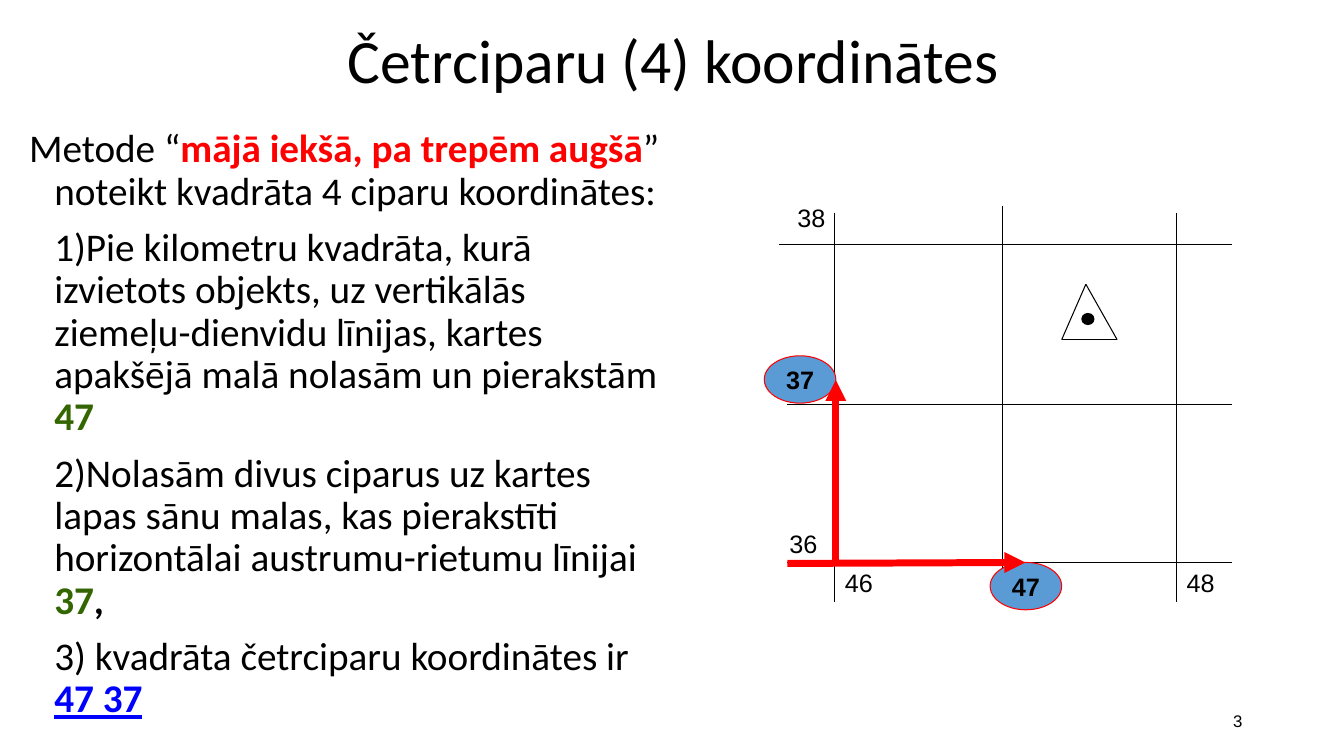
from dataclasses import dataclass

from pptx import Presentation
from pptx.dml.color import RGBColor
from pptx.enum.shapes import MSO_CONNECTOR, MSO_SHAPE
from pptx.enum.text import MSO_ANCHOR, PP_ALIGN
from pptx.oxml.ns import qn
from pptx.shapes.autoshape import Shape
from pptx.slide import Slide
from pptx.util import Inches, Pt
from lxml.etree import SubElement

BLACK = RGBColor(0x00, 0x00, 0x00)
RED = RGBColor(0xFF, 0x00, 0x00)
GREEN = RGBColor(0x33, 0x66, 0x00)
LINK_BLUE = RGBColor(0x00, 0x00, 0xFF)
MARKER_BLUE = RGBColor(0x5B, 0x9B, 0xD5)


@dataclass(frozen=True)
class Box:
    left: float
    top: float
    width: float
    height: float


@dataclass(frozen=True)
class Phrase:
    text: str
    color: RGBColor = BLACK
    bold: bool = False
    underline: bool = False


@dataclass(frozen=True)
class Step:
    phrases: tuple[Phrase, ...]
    first_line_indent: float = 0


@dataclass(frozen=True)
class Label:
    text: str
    box: Box
    size: float = 18
    font: str = "Arial"
    align: PP_ALIGN = PP_ALIGN.LEFT
    anchor: MSO_ANCHOR = MSO_ANCHOR.TOP
    line_spacing: float = 1.0


@dataclass(frozen=True)
class Line:
    start: tuple[float, float]
    end: tuple[float, float]
    color: RGBColor = BLACK
    width: float = 0.75
    arrow: bool = False


@dataclass(frozen=True)
class Oval:
    box: Box
    fill: RGBColor
    outline: RGBColor
    text: str = ""


STEPS = (
    Step((
        Phrase("Metode “"),
        Phrase("mājā iekšā, pa trepēm augšā", RED, True),
        Phrase("” noteikt kvadrāta 4 ciparu koordinātes:"),
    ), -0.25),
    Step((
        Phrase("1)Pie kilometru kvadrāta, kurā izvietots objekts, uz vertikālās "
               "ziemeļu-dienvidu līnijas, kartes apakšējā malā nolasām un pierakstām "),
        Phrase("47", GREEN, True),
    )),
    Step((
        Phrase("2)Nolasām divus ciparus uz kartes lapas sānu malas, kas pierakstīti "
               "horizontālai austrumu-rietumu līnijai "),
        Phrase("37", GREEN, True),
        Phrase(",", BLACK, True),
    )),
    Step((
        Phrase("3) kvadrāta četrciparu koordinātes ir "),
        Phrase("47 37", LINK_BLUE, True, True),
    )),
)

LABELS = (
    Label("3", Box(9.42, 6.95, 3, 0.4), 12, align=PP_ALIGN.RIGHT, anchor=MSO_ANCHOR.MIDDLE),
    Label("Četrciparu (4) koordinātes", Box(2.18, 0.21, 9, 0.85), 44, "Calibri",
          PP_ALIGN.CENTER, MSO_ANCHOR.MIDDLE, 0.9),
    Label("46", Box(8.28, 5.58, 0.79, 0.4)),
    Label("48", Box(11.67, 5.58, 0.87, 0.4)),
    Label("36", Box(7.73, 5.19, 0.79, 0.4)),
    Label("38", Box(7.81, 1.96, 0.55, 0.4)),
)

GRID_RIGHT, GRID_BOTTOM = 12.22, 5.97
ROWS = ((7.81, 5.58), (7.81, 4.01), (7.73, 2.43))
COLUMNS = ((8.28, 2.11), (9.94, 2.04), (11.67, 2.11))
GRID = tuple(Line((left, y), (GRID_RIGHT, y)) for left, y in ROWS) + tuple(
    Line((x, top), (x, GRID_BOTTOM)) for x, top in COLUMNS
)

CORNERS = ((10.53, 3.37), (10.77, 2.82), (11.08, 3.37))
TRIANGLE = tuple(Line(start, end) for start, end in zip(CORNERS, CORNERS[1:] + CORNERS[:1]))

ARROWS = (
    Line((7.81, 5.59), (10.17, 5.58), RED, 5, True),
    Line((8.29, 5.57), (8.29, 3.77), RED, 5, True),
)

OVALS = (
    Oval(Box(9.82, 5.58, 0.71, 0.47), MARKER_BLUE, RED, "47"),
    Oval(Box(7.58, 3.53, 0.71, 0.47), MARKER_BLUE, RED, "37"),
    Oval(Box(10.73, 3.11, 0.12, 0.11), BLACK, BLACK),
)


def inches(box: Box) -> tuple[Inches, ...]:
    return tuple(Inches(n) for n in (box.left, box.top, box.width, box.height))


def add_text_area(slide: Slide, box: Box) -> Shape:
    area = slide.shapes.add_textbox(*inches(box))
    area.text_frame.word_wrap = True
    return area


def draw_label(slide: Slide, label: Label) -> None:
    frame = add_text_area(slide, label.box).text_frame
    frame.vertical_anchor = label.anchor
    frame.text = label.text
    paragraph = frame.paragraphs[0]
    paragraph.alignment = label.align
    paragraph.line_spacing = label.line_spacing
    font = paragraph.runs[0].font
    font.name, font.size = label.font, Pt(label.size)
    font.color.rgb = BLACK


def draw_steps(slide: Slide, steps: tuple[Step, ...], box: Box) -> None:
    frame = add_text_area(slide, box).text_frame
    for number, step in enumerate(steps):
        paragraph = frame.add_paragraph() if number else frame.paragraphs[0]
        paragraph.line_spacing = 0.9
        paragraph.space_before = Pt(10)
        properties = paragraph._p.get_or_add_pPr()
        properties.set("marL", str(Inches(0.25)))
        properties.set("indent", str(Inches(step.first_line_indent)))
        for phrase in step.phrases:
            run = paragraph.add_run()
            run.text = phrase.text
            run.font.name, run.font.size = "Calibri", Pt(28)
            run.font.bold, run.font.underline = phrase.bold, phrase.underline
            run.font.color.rgb = phrase.color


def draw_line(slide: Slide, line: Line) -> None:
    ends = (Inches(n) for n in line.start + line.end)
    connector = slide.shapes.add_connector(MSO_CONNECTOR.STRAIGHT, *ends)
    connector.line.color.rgb = line.color
    connector.line.width = Pt(line.width)
    if line.arrow:
        SubElement(connector.line._get_or_add_ln(), qn("a:tailEnd"), type="triangle")
    SubElement(connector._element.spPr, qn("a:effectLst"))


def draw_oval(slide: Slide, oval: Oval) -> None:
    marker = slide.shapes.add_shape(MSO_SHAPE.OVAL, *inches(oval.box))
    marker.shadow.inherit = False
    marker.fill.solid()
    marker.fill.fore_color.rgb = oval.fill
    marker.line.color.rgb = oval.outline
    marker.line.width = Pt(0.75)
    if oval.text:
        frame = marker.text_frame
        frame.word_wrap = False
        frame.vertical_anchor = MSO_ANCHOR.MIDDLE
        frame.text = oval.text
        frame.paragraphs[0].alignment = PP_ALIGN.CENTER
        font = frame.paragraphs[0].runs[0].font
        font.name, font.size, font.bold = "Arial", Pt(18), True
        font.color.rgb = BLACK


def main() -> None:
    presentation = Presentation()
    presentation.slide_width, presentation.slide_height = Inches(13.33), Inches(7.5)
    slide = presentation.slides.add_slide(presentation.slide_layouts[6])
    for label in LABELS:
        draw_label(slide, label)
    draw_steps(slide, STEPS, Box(0.19, 1.23, 6.48, 6.06))
    for line in GRID + TRIANGLE:
        draw_line(slide, line)
    for oval in OVALS:
        draw_oval(slide, oval)
    for arrow in ARROWS:
        draw_line(slide, arrow)
    presentation.save("out.pptx")


if __name__ == "__main__":
    main()
